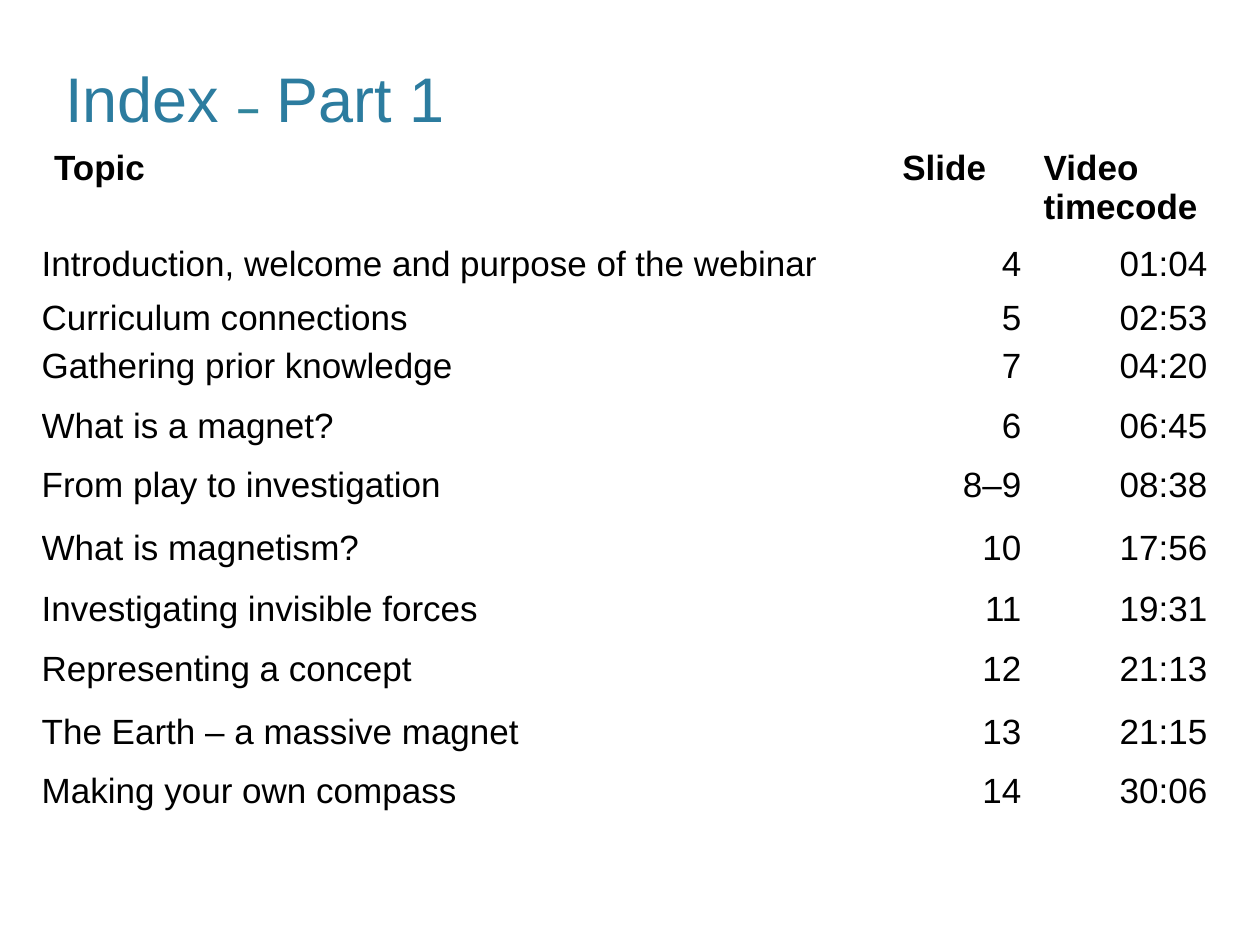
from pptx import Presentation
from pptx.dml.color import RGBColor
from pptx.enum.text import MSO_ANCHOR, PP_ALIGN
from pptx.util import Cm, Pt

BOTTOM = MSO_ANCHOR.BOTTOM
TOP = MSO_ANCHOR.TOP
LEFT = PP_ALIGN.LEFT
RIGHT = PP_ALIGN.RIGHT

TITLE = [
    ("Index ", 36, "2C7C9F", False),
    ("–", 23, "31859C", True),
    (" Part 1", 36, "2C7C9F", False),
]
HEADINGS = ("Topic", "Slide", "Video timecode")
TOPICS = [
    ("Introduction, welcome and purpose of the webinar", "4", "01:04"),
    ("Curriculum connections", "5", "02:53"),
    ("Gathering prior knowledge", "7", "04:20"),
    ("What is a magnet?", "6", "06:45"),
    ("From play to investigation", "8–9", "08:38"),
    ("What is magnetism?", "10", "17:56"),
    ("Investigating invisible forces", "11", "19:31"),
    ("Representing a concept", "12", "21:13"),
    ("The Earth – a massive magnet", "13", "21:15"),
    ("Making your own compass", "14", "30:06"),
]
COLUMN_WIDTHS = (17.1, 2.85, 3.75)
ROW_HEIGHTS = (1.88, 1.09, 0.96, 1.22, 1.19, 1.27, 1.22, 1.22, 1.27, 1.19, 1.88)


def colour(hex_code):
    return RGBColor.from_string(hex_code)


class IndexSlide:
    font_name = "Arial"
    body_size = 20
    body_colour = "000000"
    heading_insets = (0.25, 0.25, 0.25, 0.25)
    entry_insets = (0, 0, 0.2, 0)

    def __init__(self, slide):
        self.slide = slide

    def style(self, font, size, hex_code, bold):
        font.name = self.font_name
        font.size = Pt(size)
        font.bold = bold
        font.color.rgb = colour(hex_code)

    def inset(self, holder, insets):
        left, top, right, bottom = map(Cm, insets)
        holder.margin_left, holder.margin_top = left, top
        holder.margin_right, holder.margin_bottom = right, bottom

    def title(self, pieces, left, top, width, height):
        box = self.slide.shapes.add_textbox(Cm(left), Cm(top), Cm(width), Cm(height))
        frame = box.text_frame
        frame.word_wrap = True
        frame.vertical_anchor = BOTTOM
        self.inset(frame, self.heading_insets)
        for words, size, hex_code, bold in pieces:
            run = frame.paragraphs[0].add_run()
            run.text = words
            self.style(run.font, size, hex_code, bold)

    def cell(self, cell, words, insets, align, bold):
        cell.fill.background()
        cell.vertical_anchor = TOP
        self.inset(cell, insets)
        cell.text_frame.text = words
        paragraph = cell.text_frame.paragraphs[0]
        paragraph.alignment = align
        self.style(paragraph.runs[0].font, self.body_size, self.body_colour, bold)

    def table(self, headings, entries, left, top, widths, heights):
        table = self.slide.shapes.add_table(
            len(heights), len(widths),
            Cm(left), Cm(top), Cm(sum(widths)), Cm(sum(heights)),
        ).table
        table.first_row = False
        table.horz_banding = False
        for column, width in zip(table.columns, widths):
            column.width = Cm(width)
        for row, height in zip(table.rows, heights):
            row.height = Cm(height)
        for column, heading in enumerate(headings):
            self.cell(table.cell(0, column), heading, self.heading_insets, LEFT, True)
        for row, entry in enumerate(entries, start=1):
            for column, words in enumerate(entry):
                align = RIGHT if column else LEFT
                self.cell(table.cell(row, column), words, self.entry_insets, align, False)


def main():
    deck = Presentation()
    deck.slide_width, deck.slide_height = Cm(25.4), Cm(19.05)
    index = IndexSlide(deck.slides.add_slide(deck.slide_layouts[6]))
    index.title(TITLE, 1.07, 1.12, 11.07, 1.85)
    index.table(HEADINGS, TOPICS, 0.84, 2.74, COLUMN_WIDTHS, ROW_HEIGHTS)
    deck.save("out.pptx")


if __name__ == "__main__":
    main()
